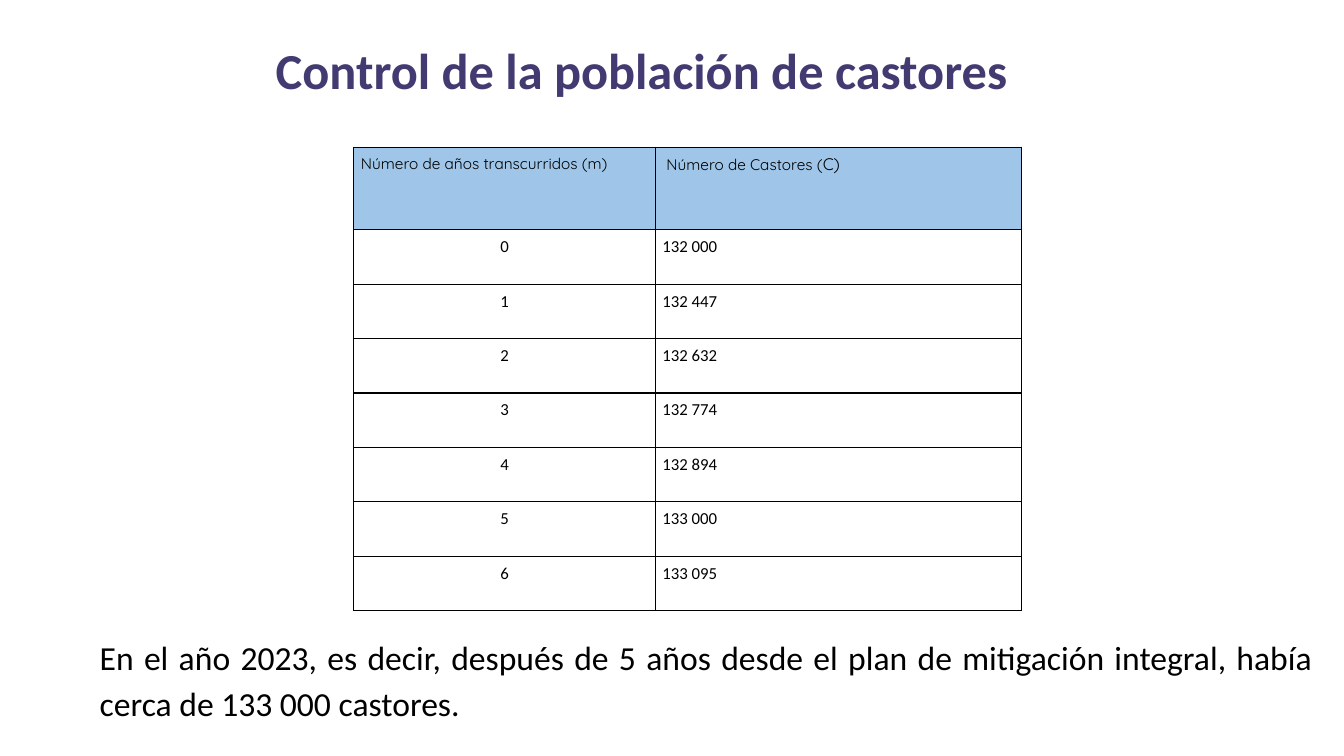
from lxml.etree import SubElement
from pptx import Presentation
from pptx.dml.color import RGBColor
from pptx.enum.text import MSO_AUTO_SIZE as AutoSize, MSO_VERTICAL_ANCHOR as Anchor, PP_ALIGN as Align
from pptx.oxml.ns import qn
from pptx.util import Inches, Pt

BLACK = RGBColor(0x00, 0x00, 0x00)
PURPLE = RGBColor(0x42, 0x3B, 0x71)
SKY = RGBColor(0x9F, 0xC5, 0xE8)

BODY = {"name": "Calibri", "size": Pt(12), "bold": False}
HEADER = {"name": "Quicksand", "size": Pt(11), "bold": False}
TITLE = {"name": "Calibri", "size": Pt(36), "bold": True}
NOTE = {"name": "Calibri", "size": Pt(24), "bold": False}

BEAVERS = ["132 000", "132 447", "132 632", "132 774", "132 894", "133 000", "133 095"]
COLUMN_WIDTHS = [2.99, 3.63]
HEADER_HEIGHT, ROW_HEIGHT = 0.82, 0.54
CELL_INSET = 0.07


def apply(target, values):
    for name, value in values.items():
        setattr(target, name, value)


class Page:
    def __init__(self, deck):
        self.slide = deck.slides.add_slide(deck.slide_layouts[5])
        self.inset = Inches(0.1)

    def add_span(self, para, text, style, color=BLACK):
        span = para.add_run()
        span.text = text
        apply(span.font, style)
        span.font.color.rgb = color

    def fill_box(self, box, area, text, style, color, layout):
        apply(box, dict(zip(("left", "top", "width", "height"), map(Inches, area))))
        frame = box.text_frame
        apply(frame, {"word_wrap": True, "auto_size": AutoSize.NONE, "vertical_anchor": Anchor.TOP})
        apply(frame, {f"margin_{side}": self.inset for side in ("left", "top", "right", "bottom")})
        para = frame.paragraphs[0]
        apply(para, layout)
        self.add_span(para, text, style, color)

    def title(self, area, text):
        self.fill_box(self.slide.shapes.title, area, text, TITLE, PURPLE,
                      {"alignment": Align.CENTER, "line_spacing": 1.0})

    def note(self, area, text):
        box = self.slide.shapes.add_textbox(*map(Inches, area))
        self.fill_box(box, area, text, NOTE, BLACK,
                      {"alignment": Align.JUSTIFY, "line_spacing": 1.15})

    def border(self, cell):
        properties = cell._tc.get_or_add_tcPr()
        for side in ("lnL", "lnR", "lnT", "lnB"):
            line = SubElement(properties, qn(f"a:{side}"), w=str(Pt(1)))
            solid = SubElement(line, qn("a:solidFill"))
            SubElement(solid, qn("a:srgbClr"), val=str(BLACK))

    def cell(self, cell, spans, align=Align.LEFT, fill=None, left=CELL_INSET):
        self.border(cell)
        if fill is None:
            cell.fill.background()
        else:
            cell.fill.solid()
            cell.fill.fore_color.rgb = fill
        apply(cell, {f"margin_{side}": Inches(CELL_INSET) for side in ("top", "right", "bottom")})
        apply(cell, {"margin_left": Inches(left), "vertical_anchor": Anchor.TOP})
        para = cell.text_frame.paragraphs[0]
        para.alignment = align
        for text, style in spans:
            self.add_span(para, text, style)

    def table(self, left, top, counts):
        heights = [HEADER_HEIGHT] + [ROW_HEIGHT] * len(counts)
        table = self.slide.shapes.add_table(
            len(heights), len(COLUMN_WIDTHS), Inches(left), Inches(top),
            Inches(sum(COLUMN_WIDTHS)), Inches(sum(heights))).table
        apply(table, {"first_row": False, "horz_banding": False})
        for column, width in zip(table.columns, COLUMN_WIDTHS):
            column.width = Inches(width)
        for row, height in zip(table.rows, heights):
            row.height = Inches(height)
        self.cell(table.cell(0, 0), [("Número de años transcurridos (m)", HEADER)], fill=SKY)
        self.cell(table.cell(0, 1), [("Número de Castores (", HEADER), ("C)", HEADER | {"size": Pt(12)})],
                  fill=SKY, left=0.11)
        for year, count in enumerate(counts):
            self.cell(table.cell(year + 1, 0), [(str(year), BODY)], Align.CENTER)
            self.cell(table.cell(year + 1, 1), [(count, BODY)])


def main():
    deck = Presentation()
    apply(deck, {"slide_width": Inches(13.33), "slide_height": Inches(7.5)})
    page = Page(deck)
    page.note((0.89, 6.16, 12.23, 1.07),
              "En el año 2023, es decir, después de 5 años desde el plan de mitigación integral, "
              "había cerca de 133 000 castores.")
    page.title((2.35, 0.29, 8.03, 0.81), "Control de la población de castores")
    page.table(3.51, 1.46, BEAVERS)
    deck.save("out.pptx")


if __name__ == "__main__":
    main()
